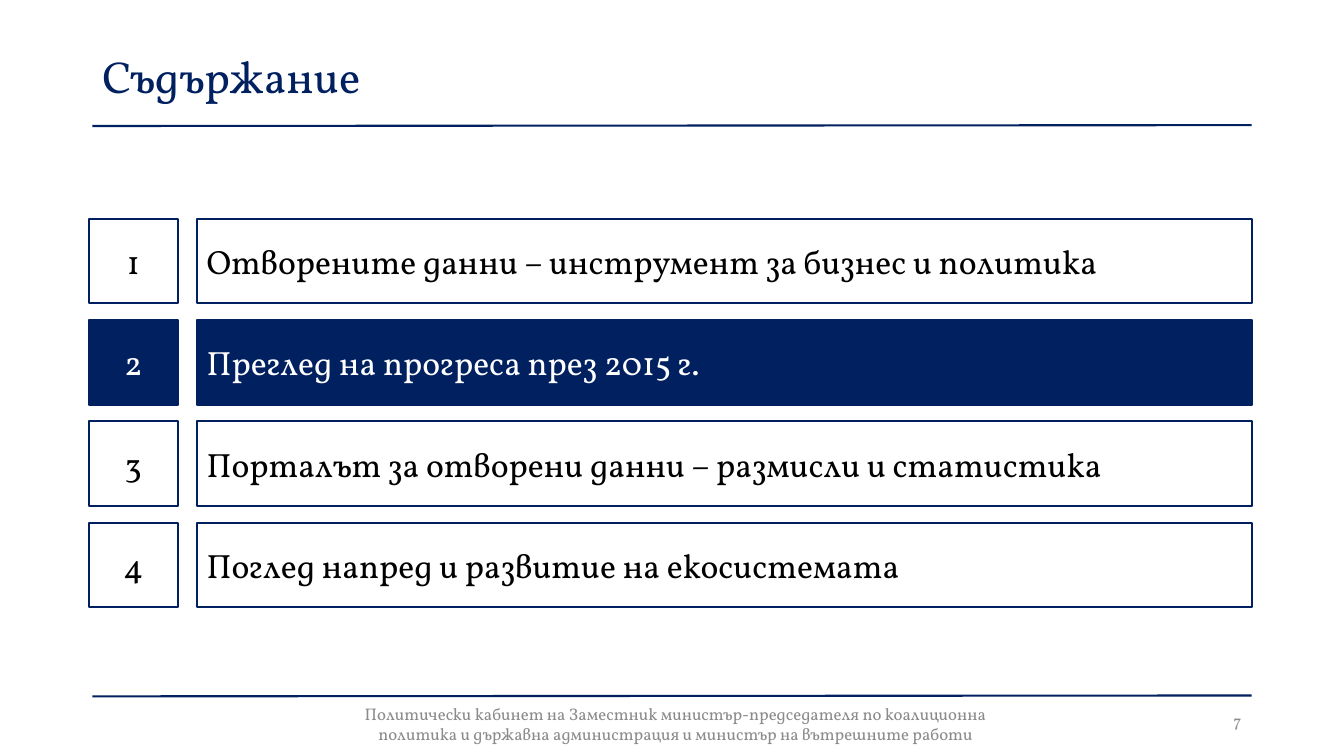
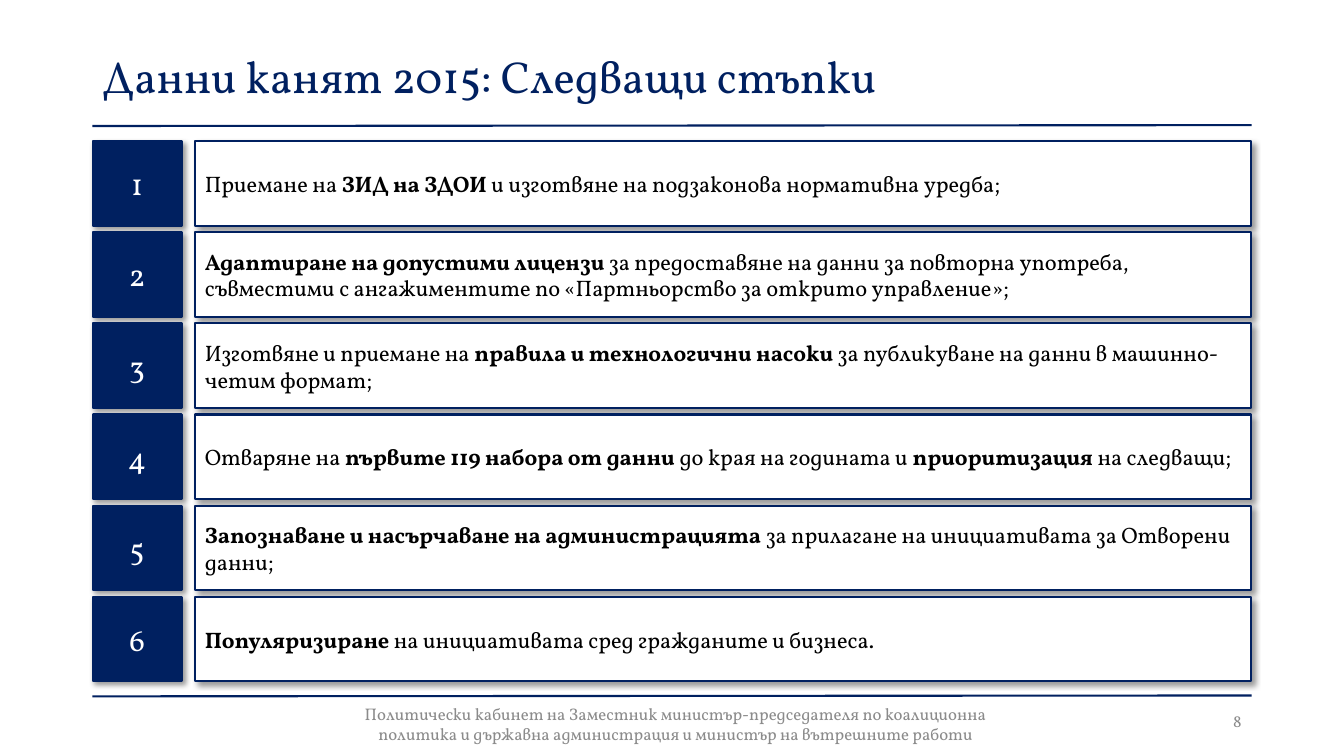
from dataclasses import dataclass

from lxml import etree
from pptx import Presentation
from pptx.dml.color import RGBColor
from pptx.enum.lang import MSO_LANGUAGE_ID
from pptx.enum.shapes import MSO_CONNECTOR, MSO_SHAPE
from pptx.enum.text import MSO_ANCHOR, MSO_AUTO_SIZE, PP_ALIGN
from pptx.oxml.ns import qn
from pptx.util import Pt

RECT = MSO_SHAPE.RECTANGLE
STRAIGHT = MSO_CONNECTOR.STRAIGHT
MIDDLE = MSO_ANCHOR.MIDDLE
LEFT, CENTER, RIGHT = PP_ALIGN.LEFT, PP_ALIGN.CENTER, PP_ALIGN.RIGHT
NO_FIT = MSO_AUTO_SIZE.NONE
LANG = MSO_LANGUAGE_ID.BULGARIAN


@dataclass(frozen=True)
class Theme:
    font: str = "Vollkorn"
    navy: RGBColor = RGBColor(0x00, 0x20, 0x60)
    white: RGBColor = RGBColor(0xFF, 0xFF, 0xFF)
    black: RGBColor = RGBColor(0x00, 0x00, 0x00)
    gray: RGBColor = RGBColor(0x8B, 0x8B, 0x8B)
    title: int = 32
    topic: int = 24
    badge: int = 22
    step: int = 16
    small: int = 12
    line: float = 1.5


@dataclass(frozen=True)
class Box:
    x: float
    y: float
    w: float
    h: float

    def place(self):
        return Pt(self.x), Pt(self.y), Pt(self.w), Pt(self.h)


THEME = Theme()
FOOTER = ("Политически кабинет на Заместник министър-председателя по коалиционна "
          "политика и държавна администрация и министър на вътрешните работи")
TOPICS = [
    "Отворените данни – инструмент за бизнес и политика",
    "Преглед на прогреса през 2015 г.",
    "Порталът за отворени данни – размисли и статистика",
    "Поглед напред и развитие на екосистемата",
]
# Each step is a list of (text, bold) runs
STEPS = [
    [("Приемане на ", False), ("ЗИД на ЗДОИ ", True),
     ("и изготвяне на подзаконова нормативна уредба;", False)],
    [("Адаптиране на допустими лицензи ", True),
     ("за предоставяне на данни за повторна употреба, съвместими с "
      "ангажиментите по «Партньорство за открито управление»;", False)],
    [("Изготвяне и приемане на ", False), ("правила и технологични насоки ", True),
     ("за публикуване на данни в машинно-четим формат;", False)],
    [("Отваряне на ", False), ("първите 119 набора от данни ", True),
     ("до края на годината и ", False), ("приоритизация ", True),
     ("на следващи;", False)],
    [("Запознаване и насърчаване на администрацията ", True),
     ("за прилагане на инициативата за Отворени данни;", False)],
    [("Популяризиране", True),
     (" на инициативата сред гражданите и бизнеса.", False)],
]


def write(shape, runs, size, color, align=LEFT):
    frame = shape.text_frame
    frame.word_wrap = True
    frame.auto_size = NO_FIT
    frame.vertical_anchor = MIDDLE
    para = frame.paragraphs[0]
    para.alignment = align
    for text, bold in runs:
        run = para.add_run()
        run.text = text
        font = run.font
        font.name, font.size, font.bold = THEME.font, Pt(size), bold
        font.color.rgb = color
        font.language_id = LANG


def cast(shape):
    """Give the shape a soft shadow to the lower right."""
    effects = shape._element.spPr.find(qn("a:effectLst"))
    shadow = etree.SubElement(effects, qn("a:outerShdw"), blurRad=str(Pt(4)),
                              dist=str(Pt(3)), dir="2700000", algn="tl",
                              rotWithShape="0")
    color = etree.SubElement(shadow, qn("a:srgbClr"), val=str(THEME.black))
    etree.SubElement(color, qn("a:alpha"), val="40000")


def panel(slide, box, runs, size, dark, align=LEFT, raised=False):
    shape = slide.shapes.add_shape(RECT, *box.place())
    shape.fill.solid()
    shape.fill.fore_color.rgb = THEME.navy if dark else THEME.white
    shape.line.color.rgb = THEME.navy
    shape.line.width = Pt(THEME.line)
    shape.shadow.inherit = False
    if raised:
        cast(shape)
    write(shape, runs, size, THEME.white if dark else THEME.black, align)


def rule(slide, x, y, w):
    # The rule rises slightly to the right
    line = slide.shapes.add_connector(STRAIGHT, Pt(x), Pt(y), Pt(x + w), Pt(y - 0.6))
    line.line.color.rgb = THEME.navy
    line.line.width = Pt(THEME.line)
    etree.SubElement(line._element.spPr, qn("a:effectLst"))


def label(slide, box, text, align):
    shape = slide.shapes.add_textbox(*box.place())
    write(shape, [(text, False)], THEME.small, THEME.gray, align)


def base(deck, title, number):
    """Add a slide with title, rules, footer and page number."""
    slide = deck.slides.add_slide(deck.slide_layouts[5])
    rule(slide, 66, 90, 828)
    rule(slide, 66, 497.4, 828)
    head = slide.shapes.title
    head.left, head.top, head.width, head.height = Box(66, 29, 828, 49.5).place()
    write(head, [(title, False)], THEME.title, THEME.navy)
    label(slide, Box(678, 500.5, 216, 28.75), str(number), RIGHT)
    label(slide, Box(244.8, 502.5, 476, 28.75), FOOTER, CENTER)
    return slide


def agenda(slide, box, topics, active):
    pitch, high, badge, gap = 72.4, 60.5, 63.5, 13.5
    for i, topic in enumerate(topics):
        y = box.y + i * pitch
        dark = i == active
        left = badge + gap
        panel(slide, Box(box.x + left, y, box.w - left, high),
              [(topic, False)], THEME.topic, dark)
        panel(slide, Box(box.x, y, badge, high),
              [(str(i + 1), False)], THEME.topic, dark, CENTER)


def steps(slide, box, items):
    high, badge, gap = 60.5, 63.5, 9.5
    pitch = (box.h - high) / (len(items) - 1)
    for i, runs in enumerate(items):
        y = box.y + i * pitch
        left = badge + gap
        panel(slide, Box(box.x + left, y, box.w - left, high),
              runs, THEME.step, False, raised=True)
        panel(slide, Box(box.x, y, badge, high),
              [(str(i + 1), False)], THEME.badge, True, CENTER, raised=True)


def main():
    deck = Presentation()
    deck.slide_width, deck.slide_height = Pt(960), Pt(540)

    # Contents, second topic highlighted
    slide = base(deck, "Съдържание", 7)
    agenda(slide, Box(63.5, 156.2, 831, 277.7), TOPICS, 1)

    # Next steps
    slide = base(deck, "Данни канят 2015: Следващи стъпки", 8)
    steps(slide, Box(66.2, 100.8, 827.5, 386), STEPS)

    deck.save("out.pptx")


if __name__ == "__main__":
    main()
